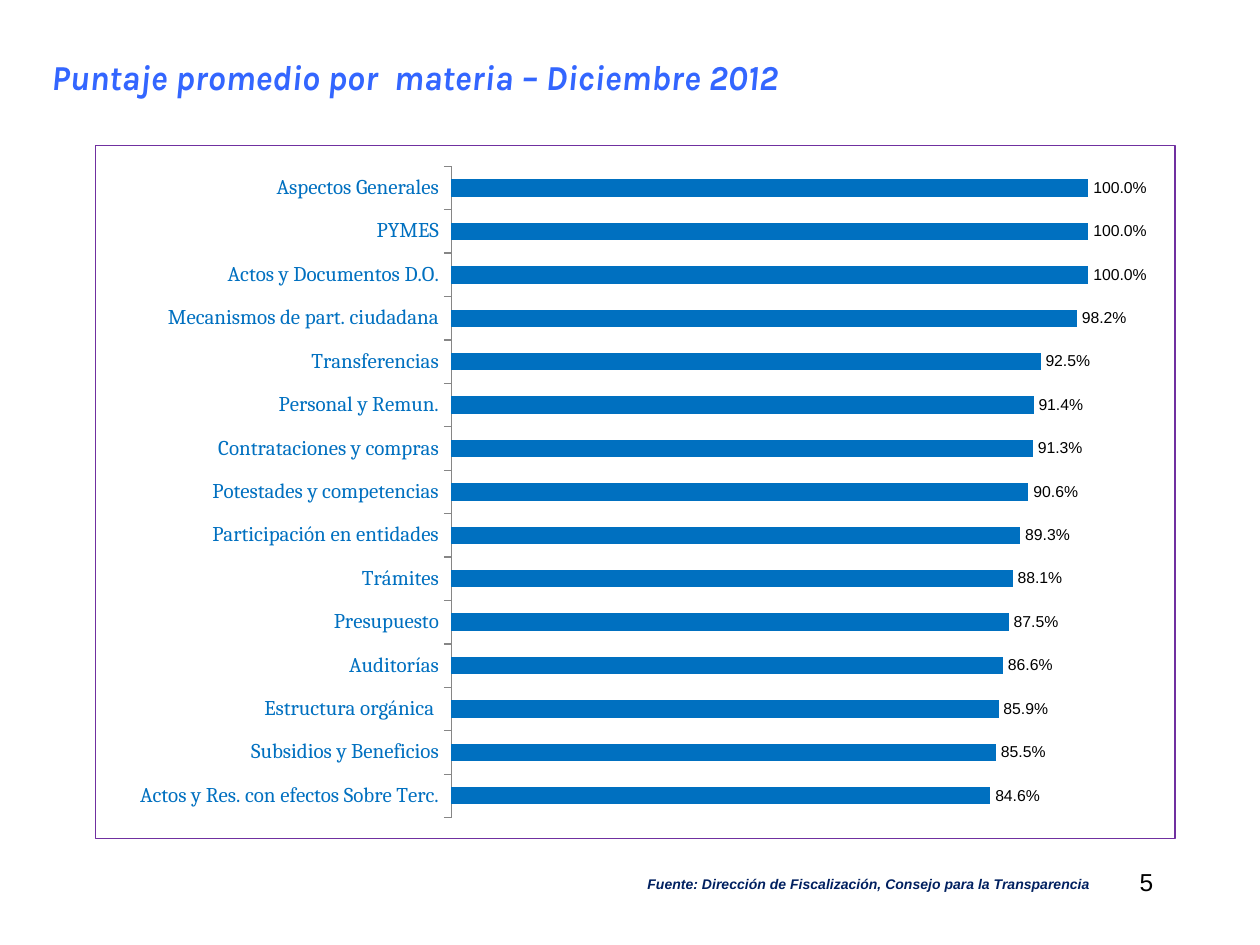
"""Build a slide with a bar chart of average score by subject."""
from lxml import etree
from pptx import Presentation
from pptx.chart.data import CategoryChartData
from pptx.dml.color import RGBColor
from pptx.enum.chart import XL_CHART_TYPE, XL_LABEL_POSITION, XL_TICK_MARK
from pptx.enum.text import PP_ALIGN
from pptx.oxml import parse_xml
from pptx.oxml.ns import nsdecls, qn
from pptx.util import Inches, Pt

BAR = XL_CHART_TYPE.BAR_CLUSTERED
OUTSIDE_END = XL_LABEL_POSITION.OUTSIDE_END
TICK_OUTSIDE, TICK_NONE = XL_TICK_MARK.OUTSIDE, XL_TICK_MARK.NONE
LEFT, RIGHT = PP_ALIGN.LEFT, PP_ALIGN.RIGHT

COLORS = {"title": "3366FF", "source": "002060", "black": "000000",
          "bar": "0070C0", "border": "7030A0", "axis": "868686"}
SCORES = [
    ("Actos y Res. con efectos Sobre Terc.", 0.846),
    ("Subsidios y Beneficios", 0.855),
    ("Estructura orgánica ", 0.859),
    ("Auditorías", 0.866),
    ("Presupuesto", 0.875),
    ("Trámites", 0.881),
    ("Participación en entidades", 0.893),
    ("Potestades y competencias", 0.906),
    ("Contrataciones y compras", 0.913),
    ("Personal y Remun.", 0.914),
    ("Transferencias", 0.925),
    ("Mecanismos de part. ciudadana", 0.982),
    ("Actos y Documentos D.O.", 1),
    ("PYMES", 1),
    ("Aspectos Generales", 1),
]
TEXTS = [
    ("5", (7.17, 6.83, 2.08, 0.5), RIGHT, "black",
     {"name": "Arial", "size": Pt(14)}),
    ("Puntaje promedio por  materia – Diciembre 2012", (0.31, 0.39, 8.11, 0.44), LEFT, "title",
     {"name": "Karla", "size": Pt(20), "bold": True, "italic": True}),
    ("Fuente: Dirección de Fiscalización, Consejo para la Transparencia",
     (5.04, 6.9, 5, 0.24), LEFT, "source",
     {"name": "Arial", "size": Pt(8), "bold": True, "italic": True}),
]
CHART_AREA = (0.75, 1.15, 8.58, 5.51)
PLOT_AREA = {"x": 0.33, "y": 0.03, "w": 0.59, "h": 0.94}


def color(key):
    return RGBColor.from_string(COLORS[key])


def style_font(font, color_key, values):
    for name, value in values.items():
        setattr(font, name, value)
    font.color.rgb = color(color_key)


def add_text(page, text, area, align, color_key, values):
    frame = page.shapes.add_textbox(*map(Inches, area)).text_frame
    frame.word_wrap = True
    para = frame.paragraphs[0]
    para.alignment = align
    span = para.add_run()
    span.text = text
    style_font(span.font, color_key, values)


def place_plot(chart):
    plot_area = chart._chartSpace.chart.plotArea
    for old in plot_area.findall(qn("c:layout")):
        plot_area.remove(old)
    layout = parse_xml(f"<c:layout {nsdecls('c')}/>")
    manual = etree.SubElement(layout, qn("c:manualLayout"))
    settings = {"layoutTarget": "inner", "xMode": "edge", "yMode": "edge", **PLOT_AREA}
    for name, value in settings.items():
        etree.SubElement(manual, qn(f"c:{name}")).set("val", str(value))
    plot_area.insert(0, layout)


def add_border(chart):
    border = parse_xml(
        f'<c:spPr {nsdecls("c", "a")}><a:noFill/><a:ln w="{Pt(0.75)}"><a:solidFill>'
        f'<a:srgbClr val="{COLORS["border"]}"/></a:solidFill></a:ln></c:spPr>')
    chart._chartSpace.chart.addnext(border)


def add_score_chart(page):
    data = CategoryChartData(number_format="0.0%")
    data.categories = [name for name, score in SCORES]
    data.add_series("Series 1", [score for name, score in SCORES])
    chart = page.shapes.add_chart(BAR, *map(Inches, CHART_AREA), data).chart
    chart.has_legend = chart.has_title = False
    style_font(chart.font, "black", {"name": "Arial", "size": Pt(12)})

    subjects, values = chart.category_axis, chart.value_axis
    subjects.major_tick_mark, subjects.minor_tick_mark = TICK_OUTSIDE, TICK_NONE
    subjects.format.line.color.rgb = color("axis")
    style_font(subjects.tick_labels.font, "bar", {"name": "Cambria", "size": Pt(12)})
    values.minimum_scale, values.maximum_scale = 0, 1
    values.has_major_gridlines = values.visible = False

    plot = chart.plots[0]
    plot.gap_width = 150
    plot.vary_by_categories = False
    fill = plot.series[0].format.fill
    fill.solid()
    fill.fore_color.rgb = color("bar")
    labels = plot.series[0].data_labels
    labels.show_value = True
    labels.position = OUTSIDE_END
    labels.number_format = "0.0%"
    labels.number_format_is_linked = False
    style_font(labels.font, "black", {"name": "Arial", "size": Pt(9)})
    place_plot(chart)
    add_border(chart)


def main():
    deck = Presentation()
    deck.slide_width, deck.slide_height = Inches(10), Inches(7.5)
    page = deck.slides.add_slide(deck.slide_layouts[6])
    for item in TEXTS:
        add_text(page, *item)
    add_score_chart(page)
    deck.save("out.pptx")


if __name__ == "__main__":
    main()
